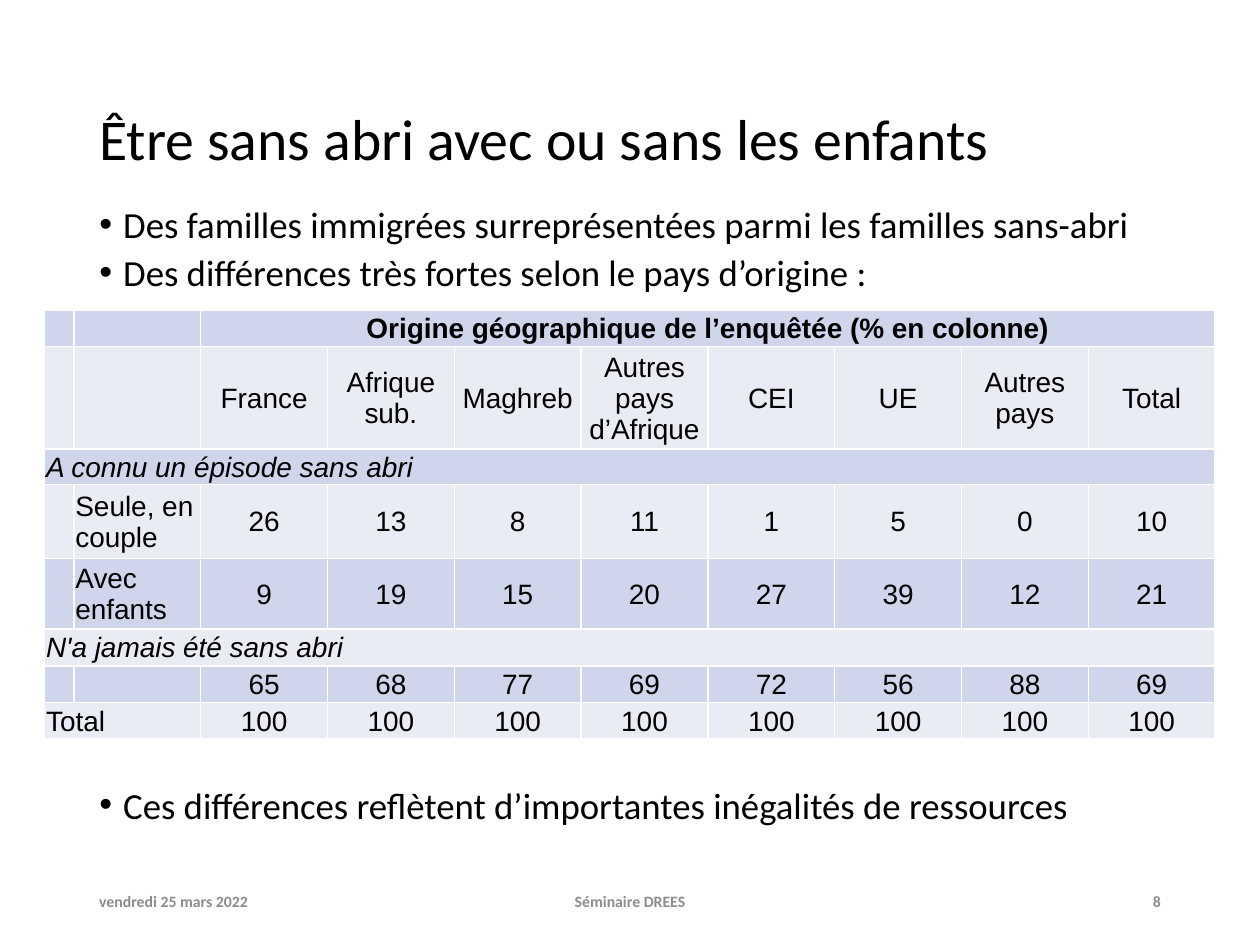
from collections import namedtuple
from dataclasses import dataclass

from lxml.etree import SubElement
from pptx import Presentation
from pptx.dml.color import RGBColor
from pptx.enum.text import MSO_ANCHOR, MSO_AUTO_SIZE, PP_ALIGN
from pptx.oxml import parse_xml
from pptx.oxml.ns import nsdecls, qn
from pptx.util import Cm, Pt

Box = namedtuple("Box", "left top width height")


@dataclass(frozen=True)
class Theme:
    ink: str = "000000"
    muted: str = "8C8C8C"
    border: str = "FFFFFF"
    bands: tuple = ("CFD5EA", "E9EBF5")
    text_font: str = "Calibri"
    table_font: str = "Arial"
    title_size: float = 33
    body_size: float = 21
    table_size: float = 16
    footer_size: float = 9


THEME = Theme()

TITLE = "Être sans abri avec ou sans les enfants"
# Each bullet with the space before it, in points
BULLETS = [
    ("Des familles immigrées surreprésentées parmi les familles sans-abri", 7.5),
    ("Des différences très fortes selon le pays d’origine :", 7.5),
    ("Ces différences reflètent d’importantes inégalités de ressources", 284),
]
FOOTER = [
    ("vendredi 25 mars 2022", 0, 5.72, PP_ALIGN.LEFT),
    ("Séminaire DREES", 6.66, 8.58, PP_ALIGN.CENTER),
    ("8", 16.18, 5.72, PP_ALIGN.RIGHT),
]

HEADING = "Origine géographique de l’enquêtée (% en colonne)"
EVER_HOMELESS = "A connu un épisode sans abri"
NEVER_HOMELESS = "N'a jamais été sans abri"
ORIGINS = ["France", "Afrique sub.", "Maghreb", "Autres pays d’Afrique",
           "CEI", "UE", "Autres pays", "Total"]
# Row height in cm, then the texts from the left
ROWS = [
    (0.74, ["", "", HEADING]),
    (1.89, ["", "", *ORIGINS]),
    (0.71, [EVER_HOMELESS]),
    (1.5, ["", "Seule, en couple", 26, 13, 8, 11, 1, 5, 0, 10]),
    (1.42, ["", "Avec enfants", 9, 19, 15, 20, 27, 39, 12, 21]),
    (0.74, [NEVER_HOMELESS]),
    (0.74, ["", "", 65, 68, 77, 69, 72, 56, 88, 69]),
    (0.74, ["Total", ""] + [100] * len(ORIGINS)),
]
# Merged cells: row, first column, last column
SPANS = [(0, 2, 9), (2, 0, 9), (5, 0, 9), (7, 0, 1)]


def apply_format(target, values):
    for name, value in values.items():
        setattr(target, name, value)


def add_span(para, text, color, **font_format):
    span = para.add_run()
    span.text = text
    apply_format(span.font, font_format)
    span.font.color.rgb = RGBColor.from_string(color)


def place(shape, box):
    apply_format(shape, box._asdict())


def build_title(page, box):
    title = page.shapes.title
    place(title, box)
    apply_format(title.text_frame, {
        "word_wrap": True, "auto_size": MSO_AUTO_SIZE.NONE,
        "vertical_anchor": MSO_ANCHOR.MIDDLE})
    para = title.text_frame.paragraphs[0]
    apply_format(para, {"alignment": PP_ALIGN.LEFT, "line_spacing": 0.9})
    add_span(para, TITLE, THEME.ink,
             name=THEME.text_font, size=Pt(THEME.title_size))


def build_bullets(page, box):
    body = page.placeholders[1]
    place(body, box)
    frame = body.text_frame
    apply_format(frame, {"word_wrap": True, "auto_size": MSO_AUTO_SIZE.NONE})
    for index, (text, space) in enumerate(BULLETS):
        para = frame.add_paragraph() if index else frame.paragraphs[0]
        apply_format(para, {"line_spacing": 0.8, "space_before": Pt(space)})
        properties = para._p.get_or_add_pPr()
        properties.set("marL", str(Cm(0.48)))
        properties.set("indent", str(-Cm(0.48)))
        SubElement(properties, qn("a:buFont"), typeface="Arial")
        SubElement(properties, qn("a:buChar"), char="•")
        add_span(para, text, THEME.ink,
                 name=THEME.text_font, size=Pt(THEME.body_size))


def draw_borders(cell):
    properties = cell._tc.get_or_add_tcPr()
    for index, side in enumerate(("lnL", "lnR", "lnT", "lnB")):
        properties.insert(index, parse_xml(
            f'<a:{side} {nsdecls("a")} w="{Pt(1)}"><a:solidFill>'
            f'<a:srgbClr val="{THEME.border}"/></a:solidFill></a:{side}>'))


def fill_cell(cell, text, row, column):
    apply_format(cell, {
        "margin_left": Cm(0.03), "margin_right": Cm(0.03),
        "margin_top": Cm(0.03), "margin_bottom": 0,
        "vertical_anchor": MSO_ANCHOR.MIDDLE})
    cell.fill.solid()
    cell.fill.fore_color.rgb = RGBColor.from_string(THEME.bands[row % 2])
    draw_borders(cell)
    para = cell.text_frame.paragraphs[0]
    para.alignment = PP_ALIGN.LEFT if column < 2 else PP_ALIGN.CENTER
    if text == "":
        # Keeps an empty cell from stretching its row
        SubElement(para._p, qn("a:endParaRPr"), sz=str(THEME.table_size * 100))
    else:
        add_span(para, str(text), THEME.ink, name=THEME.table_font,
                 size=Pt(THEME.table_size), bold=text == HEADING,
                 italic=text in (EVER_HOMELESS, NEVER_HOMELESS))


def build_table(page, box):
    column_count = len(ORIGINS) + 2
    table = page.shapes.add_table(len(ROWS), column_count, *box).table
    apply_format(table, {"first_row": False, "horz_banding": False})
    indent = Cm(0.59)
    for index, column in enumerate(table.columns):
        column.width = (box.width - indent) // (column_count - 1) if index else indent
    for row, (height, texts) in enumerate(ROWS):
        table.rows[row].height = Cm(height)
        for column in range(column_count):
            text = texts[column] if column < len(texts) else ""
            fill_cell(table.cell(row, column), text, row, column)
    for row, first, last in SPANS:
        table.cell(row, first).merge(table.cell(row, last))


def build_footer(page, box):
    for text, offset, width, alignment in FOOTER:
        note = page.shapes.add_textbox(
            box.left + Cm(offset), box.top, Cm(width), box.height)
        apply_format(note.text_frame, {
            "word_wrap": True, "vertical_anchor": MSO_ANCHOR.MIDDLE})
        para = note.text_frame.paragraphs[0]
        para.alignment = alignment
        add_span(para, text, THEME.muted, name=THEME.text_font,
                 size=Pt(THEME.footer_size), bold=True)


def main():
    deck = Presentation()
    apply_format(deck, {"slide_width": Cm(25.4), "slide_height": Cm(19.05)})
    page = deck.slides.add_slide(deck.slide_layouts[1])
    left, width = Cm(1.75), Cm(21.9)
    build_title(page, Box(left, Cm(1.02), width, Cm(3.68)))
    build_bullets(page, Box(left, Cm(4.11), width, Cm(13.54)))
    build_footer(page, Box(left, Cm(17.65), width, Cm(1.02)))
    table_height = Cm(sum(height for height, _ in ROWS))
    build_table(page, Box(Cm(0.9), Cm(6.25), Cm(23.6), table_height))
    deck.save("out.pptx")


if __name__ == "__main__":
    main()
